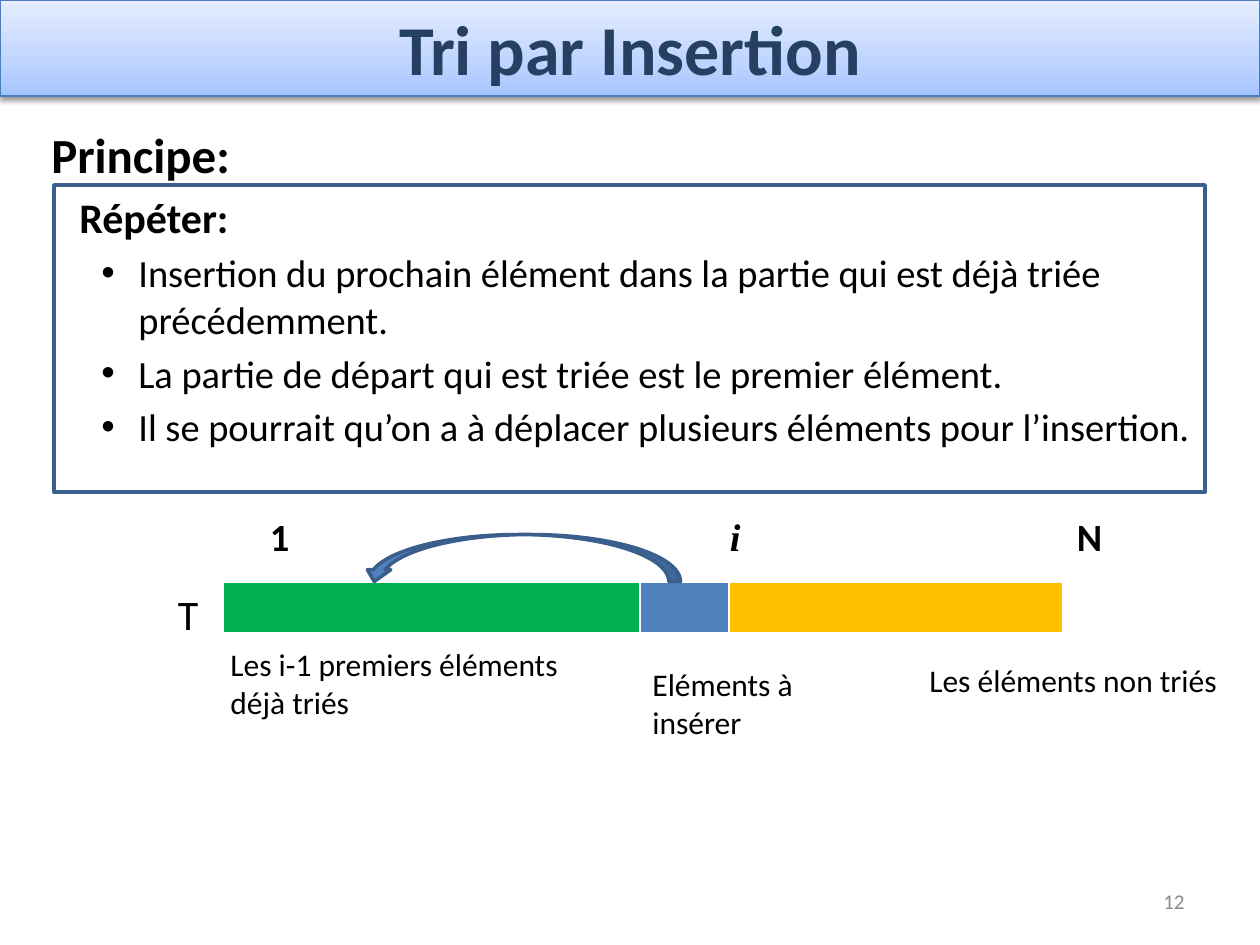
from copy import deepcopy

from lxml import etree
from pptx import Presentation
from pptx import util as u
from pptx.dml.color import RGBColor
from pptx.enum import shapes, text
from pptx.oxml import ns

TITLE = "Tri par Insertion"
GRADIENT = [(0, "A4C4FF"), (0.35, "BFD4FF"), (1, "E6EEFF")]
OUTLINE, BLACK = "3A5F8C", "000000"
# text, size, bold, left margin, hanging indent, justified
PRINCIPLE = [
    ("Principe:", 28, True, 0, 0, False),
    ("Répéter:", 24, True, 28, 0, False),
    ("Insertion du prochain élément dans la partie qui est déjà triée précédemment.",
     22, False, 87, 37, False),
    ("La partie de départ qui est triée est le premier élément.", 22, False, 87, 37, True),
    ("Il se pourrait qu’on a à déplacer plusieurs éléments pour l’insertion.",
     22, False, 87, 37, True),
]
# text, left, top, size, bold, italic, font
MARKS = [
    ("1", 270, 513, 22, True, False, "Calibri"),
    ("i", 730, 513, 22, True, True, "Times New Roman"),
    ("N", 1077, 513, 22, True, False, "Calibri"),
    ("T", 178, 589, 24, False, False, "Calibri"),
]
ARRAY_PARTS = [(417, "00B050"), (89, "4F81BD"), (334, "FFC000")]
BORDERS = [("lnL", 1), ("lnR", 1), ("lnT", 1), ("lnB", 3)]
# text, left, top, width, height, wrapped
CAPTIONS = [
    ("Les i-1 premiers éléments déjà triés", 218, 639, 407, 89, True),
    ("Eléments à insérer", 640, 659, 169, 89, True),
    ("Les éléments non triés", 917, 655, 316, 50, False),
]


def px(*values):
    """Turn pixels into EMU."""
    return [u.Emu(round(value * 914400 / 126)) for value in values]


def rgb(value):
    """Turn a hex string into a colour."""
    return RGBColor.from_string(value)


def style(paragraph, size, color=BLACK, bold=False, italic=False, name="Calibri"):
    """Set the font of every run in a paragraph."""
    for span in paragraph.runs:
        font = span.font
        font.size, font.bold, font.italic, font.name = u.Pt(size), bold, italic, name
        font.color.rgb = rgb(color)


def add_text(page, words, area, wrap=True):
    """Add a text box and return it with its first paragraph."""
    box = page.shapes.add_textbox(*px(*area))
    box.text_frame.word_wrap = wrap
    box.text_frame.text = words
    return box, box.text_frame.paragraphs[0]


def add_shape(page, kind, area, line, width, fill=None):
    """Add an outlined shape with a plain fill or none."""
    shape = page.shapes.add_shape(kind, *px(*area))
    shape.shadow.inherit = False
    shape.line.color.rgb = rgb(line)
    shape.line.width = u.Pt(width)
    if fill:
        shape.fill.solid()
        shape.fill.fore_color.rgb = rgb(fill)
    else:
        shape.fill.background()
    return shape


def add_title(page):
    """Draw the shaded title band."""
    band = add_shape(page, shapes.MSO_SHAPE.RECTANGLE, (0, 0, 1260, 96), "4B7EBC", 0.75)
    band.fill.gradient()
    band.fill.gradient_angle = 90
    stops = band.fill._fill._gradFill.gsLst
    stops.append(deepcopy(stops[0]))
    for stop, (position, color) in zip(band.fill.gradient_stops, GRADIENT):
        stop.position = position
        stop.color.rgb = rgb(color)
    effects = band._element.spPr.find(ns.qn("a:effectLst"))
    shadow = etree.SubElement(effects, ns.qn("a:outerShdw"), blurRad=str(u.Pt(3.1)),
                              dist=str(u.Pt(1.6)), dir="5400000", rotWithShape="0")
    color = etree.SubElement(shadow, ns.qn("a:srgbClr"), val=BLACK)
    etree.SubElement(color, ns.qn("a:alpha"), val="38000")
    frame = band.text_frame
    frame.text = TITLE
    frame.vertical_anchor = text.MSO_ANCHOR.MIDDLE
    frame.paragraphs[0].alignment = text.PP_ALIGN.CENTER
    style(frame.paragraphs[0], 40, "254061", True)


def add_principle(page):
    """Write the principle and its bulleted steps."""
    box, paragraph = add_text(page, "", (39, 118, 1182, 375))
    for index, (words, size, bold, margin, hanging, justified) in enumerate(PRINCIPLE):
        if index:
            paragraph = box.text_frame.add_paragraph()
            paragraph.space_before = u.Pt(size * 0.2)
        paragraph.text = words
        left, indent = px(margin, -hanging)
        properties = paragraph._p.get_or_add_pPr()
        properties.set("marL", str(left))
        properties.set("indent", str(indent))
        if hanging:
            etree.SubElement(properties, ns.qn("a:buFont"), typeface="Arial")
            etree.SubElement(properties, ns.qn("a:buChar"), char="•")
        if justified:
            paragraph.alignment = text.PP_ALIGN.JUSTIFY
        style(paragraph, size, bold=bold)


def add_array(page):
    """Draw the array as a one-row table."""
    width = sum(part for part, _ in ARRAY_PARTS)
    frame = page.shapes.add_table(1, len(ARRAY_PARTS), *px(223, 582, width, 52))
    table = frame.table
    table.first_row = table.horz_banding = False
    for index, (part, color) in enumerate(ARRAY_PARTS):
        table.columns[index].width = px(part)[0]
        cell = table.cell(0, index)
        cell.fill.solid()
        cell.fill.fore_color.rgb = rgb(color)
        properties = cell._tc.get_or_add_tcPr()
        for place, (side, weight) in enumerate(BORDERS):
            line = etree.Element(ns.qn("a:" + side), w=str(u.Pt(weight)))
            fill = etree.SubElement(line, ns.qn("a:solidFill"))
            etree.SubElement(fill, ns.qn("a:srgbClr"), val="FFFFFF")
            properties.insert(place, line)


def main():
    """Build the insertion sort slide."""
    deck = Presentation()
    deck.slide_width, deck.slide_height = px(1260, 945)
    page = deck.slides.add_slide(deck.slide_layouts[6])
    add_title(page)
    add_principle(page)
    for words, left, top, size, bold, italic, name in MARKS:
        box, paragraph = add_text(page, words, (left, top, 40, 50), False)
        frame = box.text_frame
        frame.margin_left = frame.margin_right = frame.margin_top = frame.margin_bottom = 0
        style(paragraph, size, bold=bold, italic=italic, name=name)
    box, paragraph = add_text(page, "12", (903, 876, 294, 50))
    box.text_frame.vertical_anchor = text.MSO_ANCHOR.MIDDLE
    paragraph.alignment = text.PP_ALIGN.RIGHT
    style(paragraph, 12, "8C8C8C")
    add_shape(page, shapes.MSO_SHAPE.RECTANGLE, (54, 185, 1151, 307), OUTLINE, 2)
    add_array(page)
    for words, *area, wrap in CAPTIONS:
        style(add_text(page, words, area, wrap)[1], 18)
    arrow = add_shape(page, shapes.MSO_SHAPE.CURVED_RIGHT_ARROW,
                      (498, 399, 47, 318), OUTLINE, 2, "4F81BD")
    arrow.rotation = 90
    deck.save("out.pptx")


if __name__ == "__main__":
    main()
